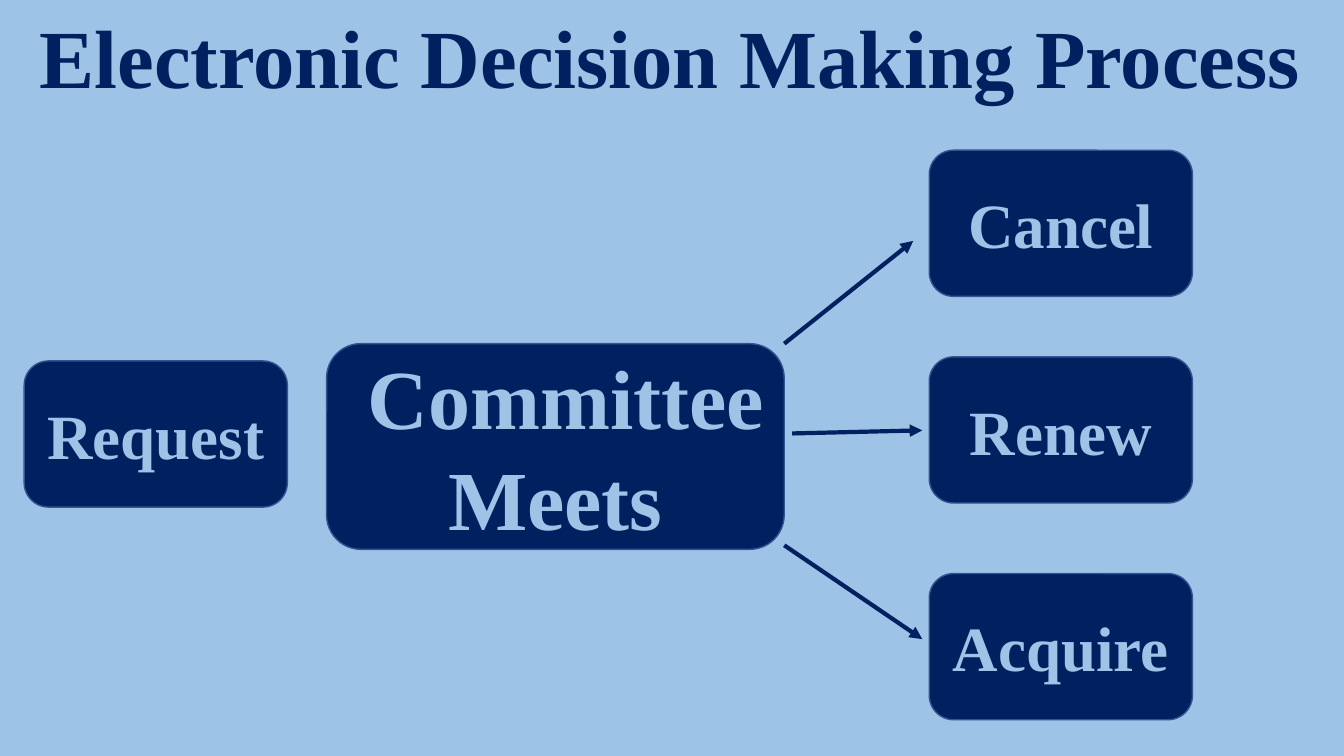
import dataclasses

import pptx
import pptx.dml.color
import pptx.enum.shapes
import pptx.enum.text
import pptx.oxml
import pptx.oxml.ns
import pptx.util

Pt = pptx.util.Pt
NAVY = pptx.dml.color.RGBColor(0x00, 0x20, 0x60)
SKY = pptx.dml.color.RGBColor(0x9D, 0xC3, 0xE6)
EDGE = pptx.dml.color.RGBColor(0x32, 0x54, 0x91)
FONT = "Times New Roman"


@dataclasses.dataclass(frozen=True)
class Step:
    text: str
    left: float
    top: float
    width: float = 188
    height: float = 104.4
    size: float = 45


@dataclasses.dataclass(frozen=True)
class Arrow:
    x1: float
    y1: float
    x2: float
    y2: float


OUTCOME_LEFT = 663.8
STEPS = [
    Step("Request", 17.3, 257.8),
    Step(" Committee Meets", 233.3, 245.5, 326.9, 146.9, 60),
    Step("Renew", OUTCOME_LEFT, 254.9),
    Step("Cancel", OUTCOME_LEFT, 107.3),
    Step("Acquire", OUTCOME_LEFT, 409.7),
]
ARROWS = [
    Arrow(560.2, 245.5, 652.3, 172.1),
    Arrow(565.9, 309.6, 658.8, 307.4),
    Arrow(560.2, 389.5, 658.8, 456.5),
]


def write_text(tf: pptx.text.text.TextFrame, text: str, *, size: float,
               color: pptx.dml.color.RGBColor, spacing: float = 1.0) -> None:
    tf.word_wrap = True
    tf.auto_size = pptx.enum.text.MSO_AUTO_SIZE.NONE
    tf.vertical_anchor = pptx.enum.text.MSO_ANCHOR.MIDDLE
    p = tf.paragraphs[0]
    p.alignment = pptx.enum.text.PP_ALIGN.CENTER
    p.line_spacing = spacing
    r = p.add_run()
    r.text = text
    r.font.name = FONT
    r.font.size = Pt(size)
    r.font.bold = True
    r.font.color.rgb = color


def add_title(s: pptx.slide.Slide, text: str) -> None:
    sp = s.shapes.title
    sp.left, sp.top, sp.width, sp.height = Pt(17.3), Pt(2.2), Pt(923.8), Pt(84.2)
    write_text(sp.text_frame, text, size=59, color=NAVY, spacing=0.9)


def add_step(s: pptx.slide.Slide, step: Step) -> None:
    sp = s.shapes.add_shape(
        pptx.enum.shapes.MSO_SHAPE.ROUNDED_RECTANGLE,
        Pt(step.left), Pt(step.top), Pt(step.width), Pt(step.height))
    sp.shadow.inherit = False
    sp.fill.solid()
    sp.fill.fore_color.rgb = NAVY
    sp.line.color.rgb = EDGE
    sp.line.width = Pt(1)
    write_text(sp.text_frame, step.text, size=step.size, color=SKY)


def add_arrow(s: pptx.slide.Slide, arrow: Arrow) -> None:
    cxn = s.shapes.add_connector(
        pptx.enum.shapes.MSO_CONNECTOR.STRAIGHT,
        Pt(arrow.x1), Pt(arrow.y1), Pt(arrow.x2), Pt(arrow.y2))
    cxn.line.color.rgb = NAVY
    cxn.line.width = Pt(3)
    ns = pptx.oxml.ns.nsdecls("a")
    ln = cxn.line._get_or_add_ln()
    ln.append(pptx.oxml.parse_xml(f'<a:tailEnd {ns} type="triangle"/>'))
    ln.getparent().append(pptx.oxml.parse_xml(f"<a:effectLst {ns}/>"))


def main() -> None:
    prs = pptx.Presentation()
    prs.slide_width, prs.slide_height = Pt(960), Pt(540)
    s = prs.slides.add_slide(prs.slide_layouts.get_by_name("Title Only"))
    s.background.fill.solid()
    s.background.fill.fore_color.rgb = SKY
    add_title(s, "Electronic Decision Making Process")
    for step in STEPS:
        add_step(s, step)
    for arrow in ARROWS:
        add_arrow(s, arrow)
    prs.save("out.pptx")


if __name__ == "__main__":
    main()
